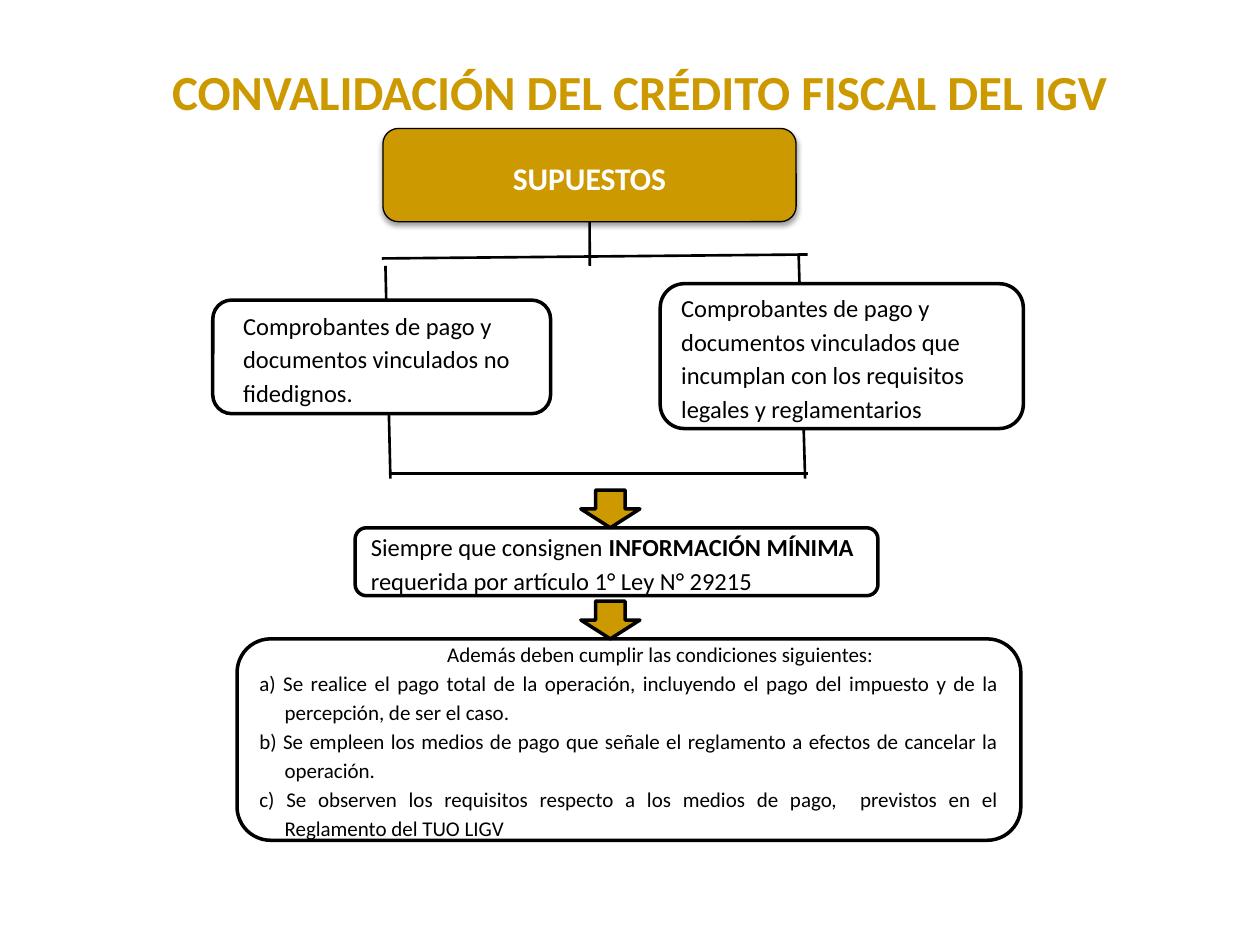
import lxml.etree
import pptx
import pptx.dml.color
import pptx.enum.shapes
import pptx.enum.text
import pptx.oxml
import pptx.oxml.ns
import pptx.util

Cm = pptx.util.Cm
Pt = pptx.util.Pt
ALIGN = pptx.enum.text.PP_ALIGN
SHAPE = pptx.enum.shapes.MSO_SHAPE
COLORS = {"gold": "CC9900", "black": "000000", "white": "FFFFFF"}


class DiagramSlide:
    """Holds the style and the current slide, with one method for each kind of element."""

    font_name = "Calibri"
    line_spacing = 1.15

    def __init__(self, presentation):
        self.slide = presentation.slides.add_slide(presentation.slide_layouts[5])

    def color(self, name):
        return pptx.dml.color.RGBColor.from_string(COLORS[name])

    def run(self, paragraph, text, size, color="black", bold=False):
        run = paragraph.add_run()
        run.text = text
        run.font.name = self.font_name
        run.font.size = Pt(size)
        run.font.bold = bold
        run.font.color.rgb = self.color(color)

    def title(self, text, left, top, width, height):
        shape = self.slide.shapes.title
        shape.left, shape.top, shape.width, shape.height = map(Cm, (left, top, width, height))
        frame = shape.text_frame
        frame.word_wrap = True
        frame.auto_size = pptx.enum.text.MSO_AUTO_SIZE.NONE
        frame.vertical_anchor = pptx.enum.text.MSO_ANCHOR.TOP
        paragraph = frame.paragraphs[0]
        paragraph.alignment = ALIGN.CENTER
        self.run(paragraph, text, 28, "gold", True)

    def shape(self, kind, left, top, width, height, fill, line_width=2):
        shape = self.slide.shapes.add_shape(kind, *map(Cm, (left, top, width, height)))
        shape.shadow.inherit = False
        shape.fill.solid()
        shape.fill.fore_color.rgb = self.color(fill)
        shape.line.color.rgb = self.color("black")
        shape.line.width = Pt(line_width)
        return shape

    def box(self, left, top, width, height, fill="white", line_width=2):
        shape = self.shape(SHAPE.ROUNDED_RECTANGLE, left, top, width, height, fill, line_width)
        shape.text_frame.word_wrap = True
        shape.text_frame.vertical_anchor = pptx.enum.text.MSO_ANCHOR.MIDDLE
        return shape

    def paragraph(self, shape, runs, size, color="black", alignment=ALIGN.LEFT, margin=0, indent=0):
        frame = shape.text_frame
        paragraph = frame.paragraphs[0] if not frame.text else frame.add_paragraph()
        paragraph.alignment = alignment
        paragraph.line_spacing = self.line_spacing
        properties = paragraph._p.get_or_add_pPr()
        properties.set("marL", str(Cm(margin)))
        properties.set("indent", str(Cm(indent)))
        for text, bold in runs:
            self.run(paragraph, text, size, color, bold)
        return paragraph

    def drop_shadow(self, shape):
        effects = shape._element.spPr.find(pptx.oxml.ns.qn("a:effectLst"))
        effects.append(pptx.oxml.parse_xml(
            f'<a:outerShdw {pptx.oxml.ns.nsdecls("a")} blurRad="{Pt(3.1)}" dist="{Pt(1.6)}" '
            f'dir="5400000" rotWithShape="0"><a:srgbClr val="{COLORS["black"]}">'
            '<a:alpha val="38000"/></a:srgbClr></a:outerShdw>'))

    def connector(self, start, end, source=None):
        connector = self.slide.shapes.add_connector(
            pptx.enum.shapes.MSO_CONNECTOR.STRAIGHT, *map(Cm, start + end))
        connector.line.color.rgb = self.color("black")
        connector.line.width = Pt(1.5)
        lxml.etree.SubElement(connector._element.spPr, pptx.oxml.ns.qn("a:effectLst"))
        if source is not None:
            connector.begin_connect(source, 2)


def main():
    presentation = pptx.Presentation()
    presentation.slide_width = Cm(25.4)
    presentation.slide_height = Cm(19.05)
    diagram = DiagramSlide(presentation)
    diagram.title("CONVALIDACIÓN DEL CRÉDITO FISCAL DEL IGV", 2.49, 1.12, 20.8, 1.45)

    cases = diagram.box(7.72, 2.59, 8.33, 1.88, "gold", 0.75)
    diagram.drop_shadow(cases)
    heading = diagram.paragraph(cases, [("SUPUESTOS", True)], 18, "white", ALIGN.CENTER)
    heading.space_after = Pt(10)

    diagram.connector((11.89, 4.47), (11.89, 5.36), cases)
    for start, end in [
        ((16.28, 5.13), (7.7, 5.21)),
        ((7.77, 5.36), (7.87, 9.65)),
        ((16.1, 5.13), (16.23, 9.65)),
        ((16.28, 9.55), (7.87, 9.55)),
    ]:
        diagram.connector(start, end)

    for position, margin, text in [
        ((4.29, 6.05, 6.81, 2.29), 0.25,
         "Comprobantes de pago y documentos vinculados no fidedignos."),
        ((13.31, 5.72, 7.32, 2.92), 0.03,
         "Comprobantes de pago y documentos vinculados que incumplan con los requisitos "
         "legales y reglamentarios"),
    ]:
        diagram.paragraph(diagram.box(*position), [(text, False)], 14, margin=margin)

    minimum = diagram.box(7.16, 10.64, 10.54, 1.37)
    diagram.paragraph(minimum, [
        ("Siempre que consignen ", False),
        ("INFORMACIÓN MÍNIMA", True),
        (" requerida por artículo 1° Ley N° 29215", False),
    ], 14)

    conditions = diagram.box(4.78, 12.88, 15.8, 4.06)
    diagram.paragraph(conditions, [("Además deben cumplir las condiciones siguientes:", False)],
                      12, alignment=ALIGN.CENTER, margin=1.27)
    for text in [
        "a) Se realice el pago total de la operación, incluyendo el pago del impuesto y de la "
        "percepción, de ser el caso.",
        "b) Se empleen los medios de pago que señale el reglamento a efectos de cancelar la "
        "operación.",
        "c) Se observen los requisitos respecto a los medios de pago,  previstos en el "
        "Reglamento del TUO LIGV",
    ]:
        diagram.paragraph(conditions, [(text, False)], 12, alignment=ALIGN.JUSTIFY,
                          margin=0.51, indent=-0.51)

    for top in (9.88, 12.12):
        diagram.shape(SHAPE.DOWN_ARROW, 11.71, top, 1.19, 0.76, "gold")

    presentation.save("out.pptx")


if __name__ == "__main__":
    main()
